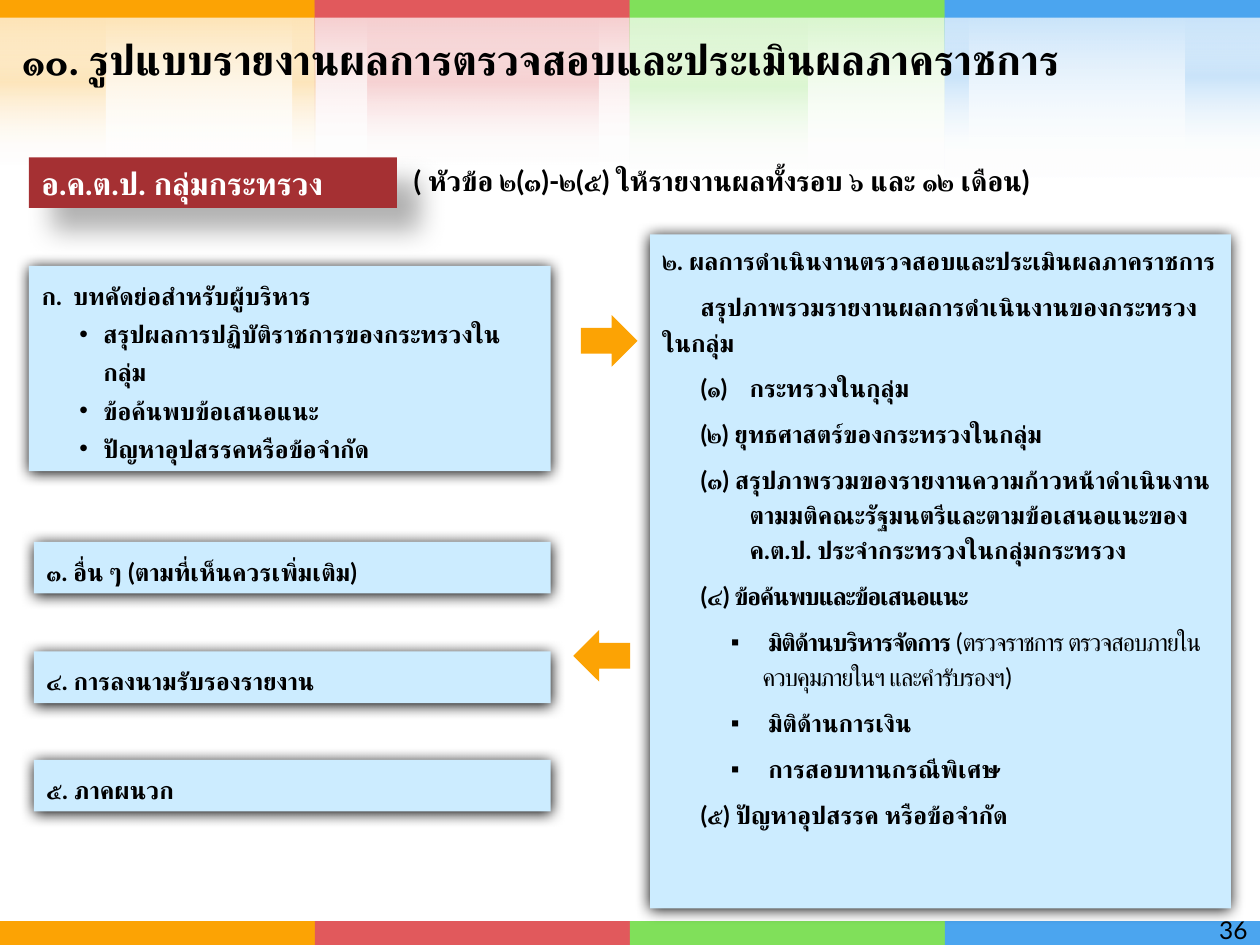
"""Build the slide on the reporting format for ministry-group audit results."""
from dataclasses import dataclass

from pptx import Presentation, oxml
from pptx import util as u
from pptx.dml.color import RGBColor
from pptx.enum import shapes, text
from pptx.oxml import ns

FONT = "Lato"
BLACK = RGBColor(0x00, 0x00, 0x00)
WHITE = RGBColor(0xFF, 0xFF, 0xFF)
ORANGE = RGBColor(0xFC, 0xA3, 0x04)
RED = RGBColor(0xE1, 0x59, 0x5C)
GREEN = RGBColor(0x80, 0xE0, 0x5A)
BLUE = RGBColor(0x4B, 0xA5, 0xEF)
PALE_BLUE = RGBColor(0xCC, 0xEC, 0xFF)
DARK_RED = RGBColor(0xA5, 0x30, 0x33)
COLUMN_WIDTH = 2.5


@dataclass(frozen=True)
class Box:
    left: float
    top: float
    width: float
    height: float

    def lengths(self) -> tuple:
        return tuple(u.Inches(n) for n in (self.left, self.top, self.width, self.height))


@dataclass(frozen=True)
class Shadow:
    opacity: int
    blur: float
    distance: float
    angle: int


@dataclass(frozen=True)
class Run:
    text: str
    bold: bool = True
    spacing: float = 0


@dataclass(frozen=True)
class Line:
    runs: tuple
    margin: float = 0
    indent: float = 0
    bullet: str = ""
    level: int = 0


@dataclass(frozen=True)
class Style:
    size: float = 14
    color: RGBColor = BLACK
    line_spacing: float = 1.0
    space_before: float = 0
    align: text.PP_ALIGN = text.PP_ALIGN.LEFT
    anchor: text.MSO_ANCHOR = text.MSO_ANCHOR.TOP


@dataclass(frozen=True)
class Column:
    color: RGBColor
    depth: float
    stripes: tuple
    stripe_depth: float


PANEL_SHADOW = Shadow(100, 8.5, 1, 90)
TAG_SHADOW = Shadow(30, 15, 18, 45)
LIST_STYLE = Style(line_spacing=1.3)
DETAIL_STYLE = Style(line_spacing=1.2, space_before=6)

COLUMNS = (
    Column(ORANGE, 1.31, ((2.32, 0.18), (0, 0.84)), 1.31),
    Column(RED, 1.31, ((2.92, 1.83),), 1.31),
    Column(GREEN, 1.37, ((5, 1.41),), 1.37),
    Column(BLUE, 1.43, ((7.5, 0.19), (9.41, 0.59)), 1.22),
)


def line(content: str, margin: float = 0, indent: float = 0, bullet: str = "", level: int = 0) -> Line:
    return Line((Run(content),), margin, indent, bullet, level)


SUMMARY = (
    line("บทคัดย่อสำหรับผู้บริหาร", 0.25, -0.25, "thaiNumPeriod"),
    *(line(item, 0.49, -0.19, "•", 1) for item in (
        "สรุปผลการปฏิบัติราชการของกระทรวงในกลุ่ม",
        "ข้อค้นพบข้อเสนอแนะ",
        "ปัญหาอุปสรรคหรือข้อจำกัด",
    )),
)
DETAILS = (
    line("๒. ผลการดำเนินงานตรวจสอบและประเมินผลภาคราชการ"),
    line("สรุปภาพรวมรายงานผลการดำเนินงานของกระทรวงในกลุ่ม", 0, 0.3),
    line("(๑)\tกระทรวงในกุลุ่ม", 0.69, -0.39),
    line("(๒) ยุทธศาสตร์ของกระทรวงในกลุ่ม", 0.69, -0.39),
    line("(๓) สรุปภาพรวมของรายงานความก้าวหน้าดำเนินงาน ตามมติคณะรัฐมนตรี"
         "และตามข้อเสนอแนะของ ค.ต.ป. ประจำกระทรวงในกลุ่มกระทรวง", 0.69, -0.39),
    Line((Run("(๔) ข้อค้นพบและข้อเสนอแนะ", spacing=-0.7),), 0.49, -0.19),
    Line((Run(" "), Run("มิติด้านบริหารจัดการ ", spacing=-0.7),
          Run("(ตรวจราชการ ตรวจสอบภายใน ควบคุมภายในฯ และคำรับรองฯ)", False, -0.7)),
         0.79, -0.25, "▪"),
    line(" มิติด้านการเงิน", 0.79, -0.25, "▪"),
    line(" การสอบทานกรณีพิเศษ", 0.79, -0.25, "▪"),
    line("(๕) ปัญหาอุปสรรค หรือข้อจำกัด", 0.49, -0.19),
)
SECTIONS = (
    (4.3, "๓. อื่น ๆ (ตามที่เห็นควรเพิ่มเติม)"),
    (5.17, "๔. การลงนามรับรองรายงาน"),
    (6.03, "๕. ภาคผนวก"),
)


def add_block(slide, box: Box, color: RGBColor, kind=shapes.MSO_SHAPE.RECTANGLE):
    shape = slide.shapes.add_shape(kind, *box.lengths())
    shape.shadow.inherit = False
    shape.fill.solid()
    shape.fill.fore_color.rgb = color
    shape.line.fill.background()
    return shape


def add_fade(slide, box: Box, stops: tuple) -> None:
    shape = slide.shapes.add_shape(shapes.MSO_SHAPE.RECTANGLE, *box.lengths())
    shape.shadow.inherit = False
    shape.line.fill.background()
    marks = "".join(
        f'<a:gs pos="{position * 1000}"><a:srgbClr val="{color}">'
        f'<a:alpha val="{opacity * 1000}"/></a:srgbClr></a:gs>'
        for position, color, opacity in stops)
    shape.element.spPr.insert(2, oxml.parse_xml(
        f'<a:gradFill {ns.nsdecls("a")} rotWithShape="1"><a:gsLst>{marks}</a:gsLst>'
        '<a:lin ang="5400000" scaled="0"/></a:gradFill>'))


def add_column(slide, left: float, column: Column) -> None:
    wash = Box(left, 0, COLUMN_WIDTH, column.depth)
    wash_stops = ((0, column.color, 20), (100, WHITE, 0))
    add_fade(slide, wash, wash_stops)
    for stripe_left, width in column.stripes:
        add_fade(slide, Box(stripe_left, 0, width, column.stripe_depth),
                 ((0, WHITE, 0), (50, column.color, 20), (100, WHITE, 0)))
    add_fade(slide, wash, wash_stops)
    for top, height in ((0, 0.14), (7.31, 0.19)):
        add_block(slide, Box(left, top, COLUMN_WIDTH, height), column.color)


def cast_shadow(shape, shadow: Shadow) -> None:
    shape.shadow.inherit = False
    shape.element.spPr.find(ns.qn("a:effectLst")).append(oxml.parse_xml(
        f'<a:outerShdw {ns.nsdecls("a")} blurRad="{u.Pt(shadow.blur)}" dist="{u.Pt(shadow.distance)}" '
        f'dir="{shadow.angle * 60000}" algn="tl" rotWithShape="0"><a:srgbClr val="{BLACK}">'
        f'<a:alpha val="{shadow.opacity * 1000}"/></a:srgbClr></a:outerShdw>'))


def format_paragraph(paragraph, content: Line, style: Style, first: bool) -> None:
    paragraph.level = content.level
    paragraph.alignment = style.align
    paragraph.line_spacing = style.line_spacing
    paragraph.space_before = u.Pt(0 if first else style.space_before)
    properties = paragraph._p.get_or_add_pPr()
    properties.set("marL", str(u.Inches(content.margin)))
    properties.set("indent", str(u.Inches(content.indent)))
    tag, key = {"": ("buNone", ""), "thaiNumPeriod": ("buAutoNum", "type")}.get(
        content.bullet, ("buChar", "char"))
    bullet = properties.makeelement(ns.qn(f"a:{tag}"), {key: content.bullet} if key else {})
    properties.append(bullet)
    for part in content.runs:
        run = paragraph.add_run()
        run.text = part.text
        run.font.name = FONT
        run.font.size = u.Pt(style.size)
        run.font.bold = part.bold
        run.font.color.rgb = style.color
        run_properties = run.font._element
        if part.spacing:
            run_properties.set("spc", str(round(part.spacing * 100)))
        run_properties.append(run_properties.makeelement(ns.qn("a:cs"), {"typeface": FONT}))


def write(shape, lines: tuple, style: Style) -> None:
    frame = shape.text_frame
    frame.word_wrap = True
    frame.auto_size = text.MSO_AUTO_SIZE.NONE
    frame.vertical_anchor = style.anchor
    for index, content in enumerate(lines):
        paragraph = frame.add_paragraph() if index else frame.paragraphs[0]
        format_paragraph(paragraph, content, style, index == 0)


def place(slide, placeholder, box: Box) -> None:
    placeholder.left, placeholder.top, placeholder.width, placeholder.height = box.lengths()
    slide.shapes.element.append(placeholder.element)


def fill_panel(shape, lines: tuple, style: Style, color=PALE_BLUE, shadow=PANEL_SHADOW) -> None:
    shape.fill.solid()
    shape.fill.fore_color.rgb = color
    cast_shadow(shape, shadow)
    write(shape, lines, style)


def main() -> None:
    presentation = Presentation()
    presentation.slide_width, presentation.slide_height = u.Inches(10), u.Inches(7.5)
    slide = presentation.slides.add_slide(presentation.slide_layouts.get_by_name("Two Content"))
    title, summary, details = list(slide.placeholders)[:3]
    for index, column in enumerate(COLUMNS):
        add_column(slide, index * COLUMN_WIDTH, column)

    place(slide, title, Box(0.08, 0.23, 9.92, 0.47))
    write(title, (line("๑๐. รูปแบบรายงานผลการตรวจสอบและประเมินผลภาคราชการ"),),
          Style(24, anchor=text.MSO_ANCHOR.MIDDLE))
    place(slide, summary, Box(0.23, 2.11, 4.14, 1.63))
    fill_panel(summary, SUMMARY, LIST_STYLE)
    place(slide, details, Box(5.16, 1.86, 4.61, 5.35))
    fill_panel(details, DETAILS, DETAIL_STYLE)

    tag = add_block(slide, Box(0.23, 1.25, 2.92, 0.4), DARK_RED)
    fill_panel(tag, (line("อ.ค.ต.ป. กลุ่มกระทรวง"),), Style(18, WHITE), DARK_RED, TAG_SHADOW)
    for top, label in SECTIONS:
        section = add_block(slide, Box(0.27, top, 4.1, 0.41), PALE_BLUE)
        fill_panel(section, (line(label),), LIST_STYLE)
    for left, top, rotation in ((4.61, 2.5, 0), (4.55, 5, 180)):
        arrow = add_block(slide, Box(left, top, 0.45, 0.41), ORANGE, shapes.MSO_SHAPE.RIGHT_ARROW)
        arrow.rotation = rotation

    note = slide.shapes.add_textbox(*Box(3.13, 1.25, 6.95, 0.37).lengths())
    write(note, (line(" ( หัวข้อ ๒(๓)-๒(๕) ให้รายงานผลทั้งรอบ ๖ และ ๑๒ เดือน)"),), Style(16))
    number = slide.shapes.add_textbox(*Box(8.78, 7.21, 1.22, 0.44).lengths())
    write(number, (Line((Run("36", False),)),), Style(align=text.PP_ALIGN.RIGHT))
    presentation.save("out.pptx")


if __name__ == "__main__":
    main()
